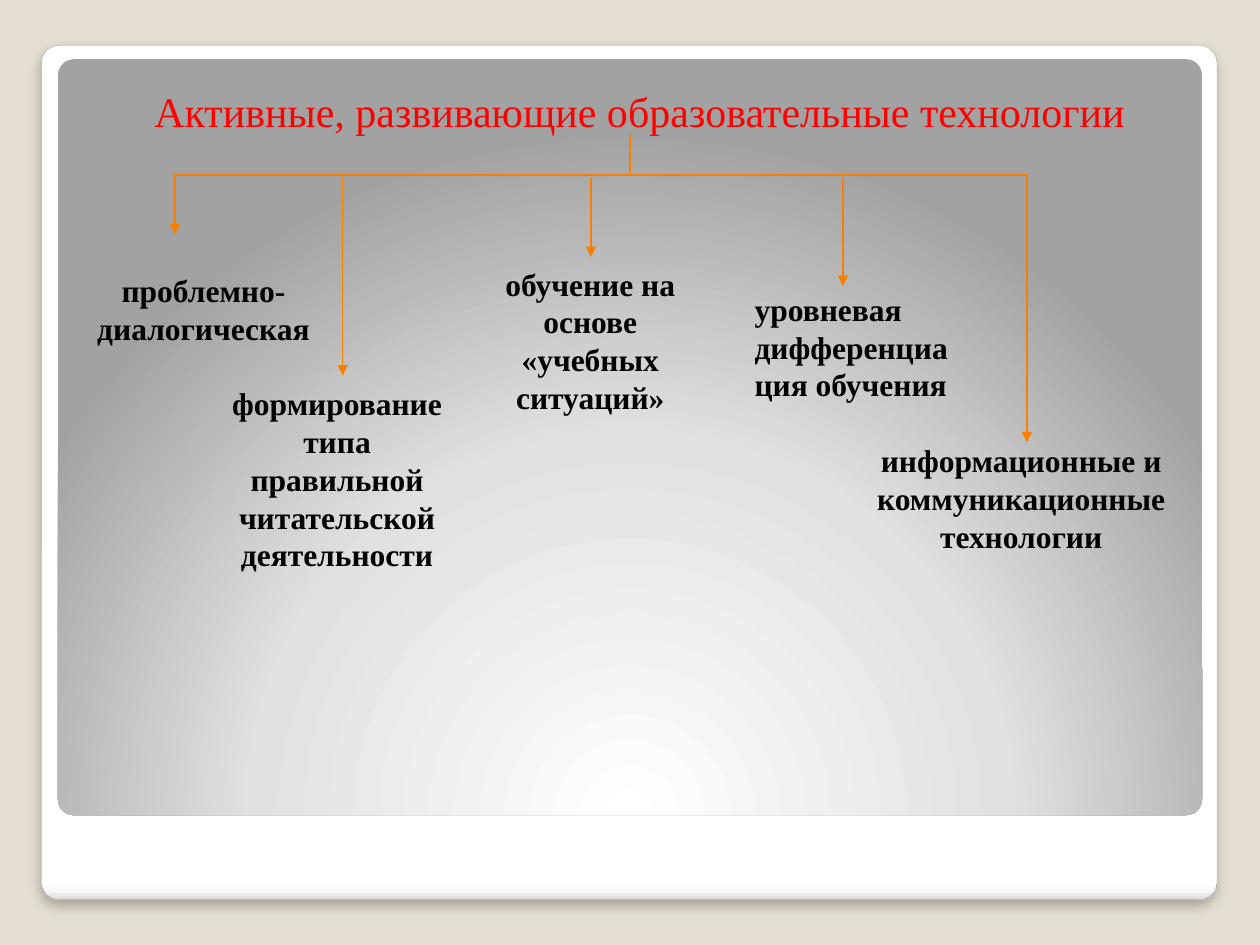
from lxml import etree
from pptx import Presentation
from pptx.dml.color import RGBColor
from pptx.enum import shapes, text
from pptx.oxml import parse_xml
from pptx.oxml.ns import nsdecls, qn
from pptx.util import Inches, Pt

FONT = "Times New Roman"
ORANGE = "F97F00"
BAR_Y = 1.39

# label, left, top, width, height, alignment
CENTER, LEFT = text.PP_ALIGN.CENTER, text.PP_ALIGN.LEFT
TECHNOLOGIES = [
    ("проблемно-диалогическая", 0.67, 2.1, 1.89, 0.71, CENTER),
    ("формирование типа правильной читательской деятельности",
     1.65, 3, 2.05, 1.62, CENTER),
    ("обучение на основе «учебных ситуаций»", 3.86, 2.05, 1.65, 1.31, CENTER),
    ("уровневая дифференциация обучения", 5.89, 2.25, 1.81, 1.01, LEFT),
    ("информационные и коммуникационные технологии",
     6.69, 3.45, 2.83, 1.01, CENTER),
]
# x, start y, end y
ARROWS = [
    (1.39, BAR_Y, 1.86),
    (2.72, 1.41, 2.98),
    (4.69, 1.41, 2.04),
    (6.69, 1.41, 2.27),
    (8.15, BAR_Y, 3.51),
]


def color(hex_code):
    return RGBColor.from_string(hex_code)


def add_panel(slide, left, top, width, height, stops, direction):
    """Rounded panel with a gradient; stops are (percent, colour)."""
    panel = slide.shapes.add_shape(
        shapes.MSO_SHAPE.ROUNDED_RECTANGLE,
        Inches(left), Inches(top), Inches(width), Inches(height))
    panel.adjustments[0] = 0.021
    panel.shadow.inherit = False
    panel.line.fill.background()
    stop_xml = "".join(
        f'<a:gs pos="{percent * 1000}"><a:srgbClr val="{hex_code}"/></a:gs>'
        for percent, hex_code in stops)
    gradient = parse_xml(
        f'<a:gradFill {nsdecls("a")} rotWithShape="1">'
        f'<a:gsLst>{stop_xml}</a:gsLst>{direction}</a:gradFill>')
    panel._element.spPr.find(qn("a:prstGeom")).addnext(gradient)
    return panel


def add_soft_shadow(panel):
    effects = panel._element.spPr.find(qn("a:effectLst"))
    effects.append(parse_xml(
        f'<a:outerShdw {nsdecls("a")} blurRad="{Pt(6)}" dist="{Pt(4)}" '
        'dir="5400000" algn="t" rotWithShape="0"><a:srgbClr val="000000">'
        '<a:alpha val="25000"/></a:srgbClr></a:outerShdw>'))


def add_line(slide, x1, y1, x2, y2, arrow=False):
    line = slide.shapes.add_connector(
        shapes.MSO_CONNECTOR.STRAIGHT,
        Inches(x1), Inches(y1), Inches(x2), Inches(y2))
    line.line.color.rgb = color(ORANGE)
    line.line.width = Pt(0.75)
    if arrow:
        etree.SubElement(line.line._get_or_add_ln(), qn("a:tailEnd"),
                         type="triangle")
    etree.SubElement(line._element.spPr, qn("a:effectLst"))


def add_text(slide, words, left, top, width, height, *, size=18, bold=False,
             hex_code="000000", align=CENTER, before=0,
             insets=(0.1, 0.05, 0.1, 0.05), grow=True):
    box = slide.shapes.add_textbox(
        Inches(left), Inches(top), Inches(width), Inches(height))
    frame = box.text_frame
    frame.word_wrap = True
    frame.auto_size = (text.MSO_AUTO_SIZE.SHAPE_TO_FIT_TEXT if grow
                       else text.MSO_AUTO_SIZE.NONE)
    (frame.margin_left, frame.margin_top,
     frame.margin_right, frame.margin_bottom) = map(Inches, insets)
    paragraph = frame.paragraphs[0]
    paragraph.alignment = align
    paragraph.space_before = Pt(before)
    run = paragraph.add_run()
    run.text = words
    run.font.name = FONT
    run.font.size = Pt(size)
    run.font.bold = bold
    run.font.color.rgb = color(hex_code)


def main():
    prs = Presentation()
    prs.slide_width, prs.slide_height = Inches(10), Inches(7.5)
    slide = prs.slides.add_slide(prs.slide_layouts[6])

    # Background and panels
    backdrop = slide.background.fill
    backdrop.solid()
    backdrop.fore_color.rgb = color("E3DED1")
    frame = add_panel(
        slide, 0.33, 0.36, 9.33, 6.78,
        [(0, "FFFFFF"), (98, "FFFFFF"), (99, "F7F7F7"), (100, "DADADA")],
        '<a:lin ang="5400000" scaled="0"/>')
    frame.line.color.rgb = color("A4A4A4")
    frame.line.width = Pt(0.16)
    add_soft_shadow(frame)
    add_panel(
        slide, 0.46, 0.47, 9.08, 6,
        [(0, "FFFFFF"), (55, "E1E1E1"), (100, "A2A2A2")],
        '<a:path path="circle">'
        '<a:fillToRect l="50000" t="175000" r="50000" b="-75000"/></a:path>')

    # Title
    add_text(slide, "Активные, развивающие образовательные технологии",
             0.55, 0.58, 8.95, 4.58, size=24, hex_code="FF0000", before=2.5,
             insets=(0.2, 0.1, 0.1, 0.05), grow=False)

    # Branches: stem, crossbar, arrows
    add_line(slide, 5, 1.07, 5, BAR_Y)
    add_line(slide, 1.38, BAR_Y, 8.15, BAR_Y)
    for x, start, end in ARROWS:
        add_line(slide, x, start, x, end, arrow=True)

    # Technologies
    for words, left, top, width, height, align in TECHNOLOGIES:
        add_text(slide, words, left, top, width, height,
                 bold=True, align=align)

    prs.save("out.pptx")


if __name__ == "__main__":
    main()
